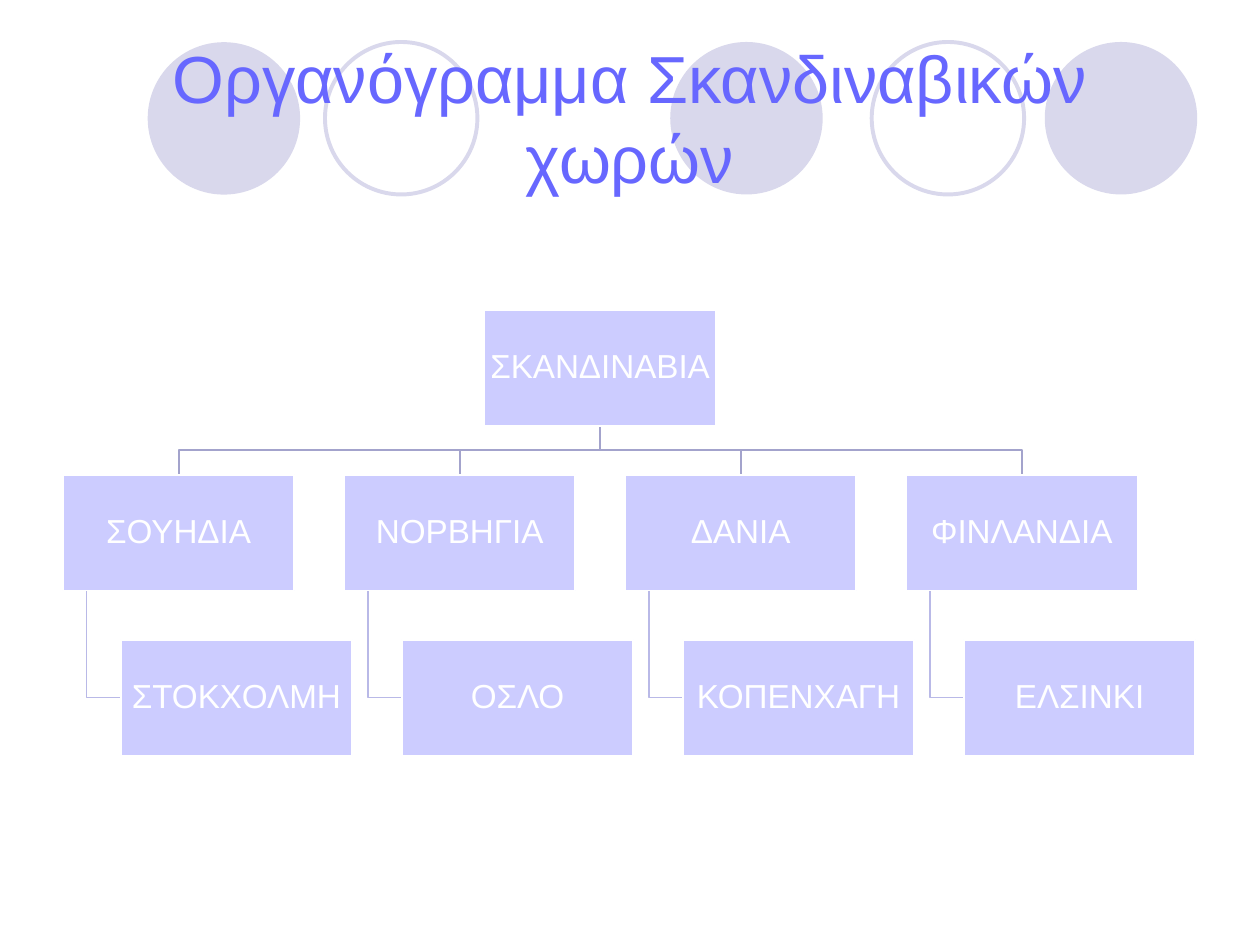
from dataclasses import dataclass

from pptx import Presentation
from pptx.dml.color import RGBColor
from pptx.enum.shapes import MSO_SHAPE as Preset
from pptx.enum.text import MSO_ANCHOR as Anchor, MSO_AUTO_SIZE as AutoSize, PP_ALIGN as Align
from pptx.util import Pt

COLORS = {
    "circle": "D9D8EC",
    "title": "6767FF",
    "box": "CCCCFF",
    "white": "FFFFFF",
    "country_link": "A3A3CC",
    "capital_link": "B9B9E7",
}
FONT = "Arial"

# Chart grid, in points
BOX_W, BOX_H = 132.2, 66.1
LEFT, TOP = 36, 177.2
COLUMN_STEP, ROW_STEP = 160.6, 94.2
CAPITAL_INDENT = BOX_W / 4
HANG_INDENT = 13.5
CIRCLE_SIZE = 87.1


@dataclass
class Circle:
    left: float
    top: float
    filled: bool


@dataclass
class Box:
    label: str
    left: float
    row: int

    @property
    def top(self) -> float:
        return TOP + self.row * ROW_STEP

    @property
    def bottom(self) -> float:
        return self.top + BOX_H

    @property
    def center(self) -> float:
        return self.left + BOX_W / 2

    @property
    def middle(self) -> float:
        return self.top + BOX_H / 2


CIRCLES = [
    Circle(383, 24, True),
    Circle(597, 24, True),
    Circle(84.4, 24.1, True),
    Circle(498.1, 24, False),
    Circle(185.7, 24, False),
]
CAPITALS = {
    "ΣΟΥΗΔΙΑ": "ΣΤΟΚΧΟΛΜΗ",
    "ΝΟΡΒΗΓΙΑ": "ΟΣΛΟ",
    "ΔΑΝΙΑ": "ΚΟΠΕΝΧΑΓΗ",
    "ΦΙΝΛΑΝΔΙΑ": "ΕΛΣΙΝΚΙ",
}


def color(key: str) -> RGBColor:
    return RGBColor.from_string(COLORS[key])


def style_text(frame, text: str, size: float, color_key: str) -> None:
    frame.text = text
    frame.word_wrap = True
    frame.vertical_anchor = Anchor.MIDDLE
    paragraph = frame.paragraphs[0]
    paragraph.alignment = Align.CENTER
    font = paragraph.runs[0].font
    font.name, font.size = FONT, Pt(size)
    font.color.rgb = color(color_key)


def draw_circle(slide, circle: Circle) -> None:
    disc = slide.shapes.add_shape(
        Preset.OVAL, Pt(circle.left), Pt(circle.top), Pt(CIRCLE_SIZE), Pt(CIRCLE_SIZE))
    disc.shadow.inherit = False
    if circle.filled:
        disc.fill.solid()
        disc.fill.fore_color.rgb = color("circle")
        disc.line.fill.background()
    else:
        disc.fill.background()
        disc.line.color.rgb = color("circle")
        disc.line.width = Pt(2.25)


def draw_link(slide, points: list[tuple[float, float]], color_key: str) -> None:
    start, *rest = [(Pt(x), Pt(y)) for x, y in points]
    builder = slide.shapes.build_freeform(*start)
    builder.add_line_segments(rest, close=False)
    link = builder.convert_to_shape()
    link.shadow.inherit = False
    link.fill.background()
    link.line.color.rgb = color(color_key)
    link.line.width = Pt(1)


def draw_box(slide, box: Box) -> None:
    card = slide.shapes.add_shape(
        Preset.RECTANGLE, Pt(box.left), Pt(box.top), Pt(BOX_W), Pt(BOX_H))
    card.shadow.inherit = False
    card.fill.solid()
    card.fill.fore_color.rgb = color("box")
    card.line.color.rgb = color("white")
    card.line.width = Pt(1)
    frame = card.text_frame
    frame.margin_left = frame.margin_right = Pt(0.95)
    frame.margin_top = frame.margin_bottom = Pt(0.95)
    style_text(frame, box.label, 19, "white")
    frame.paragraphs[0].line_spacing = 0.9


def main() -> None:
    prs = Presentation()
    prs.slide_width, prs.slide_height = Pt(720), Pt(540)
    slide = prs.slides.add_slide(prs.slide_layouts[5])

    # Decorative circles
    for circle in CIRCLES:
        draw_circle(slide, circle)

    # Title, raised above the circles
    title = slide.shapes.title
    title.left, title.top, title.width, title.height = Pt(36), Pt(21.6), Pt(648), Pt(90)
    style_text(title.text_frame, "Οργανόγραμμα Σκανδιναβικών χωρών", 38, "title")
    title.text_frame.auto_size = AutoSize.NONE
    title.element.getparent().append(title.element)

    # Organisation chart: root centred over the countries, capitals indented
    columns = [LEFT + i * COLUMN_STEP for i in range(len(CAPITALS))]
    root = Box("ΣΚΑΝΔΙΝΑΒΙΑ", (columns[0] + columns[-1]) / 2, 0)
    countries = [Box(name, x, 1) for name, x in zip(CAPITALS, columns)]
    capitals = [Box(name, x + CAPITAL_INDENT, 2)
                for name, x in zip(CAPITALS.values(), columns)]

    # Links
    bus = (root.bottom + countries[0].top) / 2
    for country, capital in zip(countries, capitals):
        hang = country.left + HANG_INDENT
        draw_link(slide, [(hang, country.bottom), (hang, capital.middle),
                          (capital.left, capital.middle)], "capital_link")
        draw_link(slide, [(root.center, root.bottom), (root.center, bus),
                          (country.center, bus), (country.center, country.top)],
                  "country_link")

    # Boxes
    for box in [root, *countries, *capitals]:
        draw_box(slide, box)

    prs.save("out.pptx")


if __name__ == "__main__":
    main()
